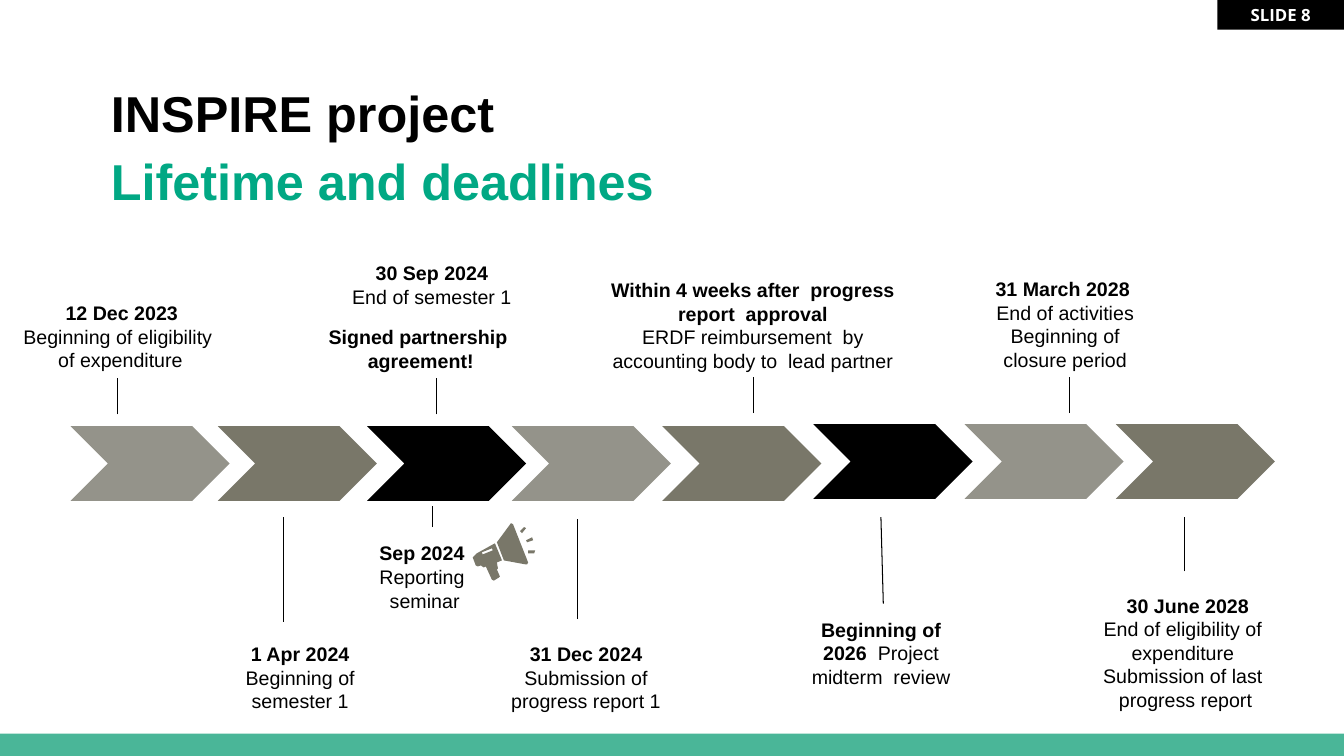
"""Build the project timeline slide with its lifetime and deadlines."""
from dataclasses import dataclass
from itertools import cycle

from lxml import etree
from pptx import Presentation
from pptx.dml.color import RGBColor
from pptx.enum import shapes, text
from pptx.oxml import ns
from pptx.util import Cm, Pt

BLACK = RGBColor(0x00, 0x00, 0x00)
WHITE = RGBColor(0xFF, 0xFF, 0xFF)
TEAL = RGBColor(0x01, 0xA8, 0x84)
MINT = RGBColor(0x4A, 0xB6, 0x98)
LIGHT_GREY = RGBColor(0x94, 0x93, 0x8A)
DARK_GREY = RGBColor(0x79, 0x77, 0x69)

CENTER = text.PP_ALIGN.CENTER
LEFT = text.PP_ALIGN.LEFT
HUNDREDTH_INCH = Cm(2.54) / 100

Point = tuple[int, int]


@dataclass(frozen=True)
class Line:
    bold: str = ""
    plain: str = ""
    right: float = 0
    before: float = 0
    align: text.PP_ALIGN = CENTER


@dataclass(frozen=True)
class Label:
    left: float
    top: float
    width: float
    height: float
    lines: tuple[Line, ...]
    indent: float = 0.25
    inset: float = 0.1


@dataclass(frozen=True)
class Tick:
    bottom_x: float
    bottom: float
    top_x: float
    top: float


CHEVRON_LEFTS = (1.78, 5.49, 9.25, 12.9, 16.69, 20.5, 24.31, 28.12)
CHEVRON_TOPS = (10.74,) * 5 + (10.69,) * 3

LABELS = (
    Label(0.28, 7.49, 5.33, 1.9, (
        Line("12 Dec 2023"),
        Line(plain="Beginning of eligibility  of expenditure", right=0.2))),
    Label(5.46, 16.08, 3.96, 1.9, (
        Line("1 Apr 2024 ", "Beginning of semester 1"),)),
    Label(7.14, 6.48, 7.24, 2.92, (
        Line("30 Sep 2024"),
        Line(plain="End of semester 1"),
        Line("Signed partnership  agreement!", right=0.56, before=12))),
    Label(12.5, 16.08, 4.29, 1.9, (
        Line("31 Dec 2024 ", "Submission of"),
        Line(plain="progress report 1"))),
    Label(14.94, 6.91, 8.15, 2.51, (
        Line("Within 4 weeks after  progress report  approval", right=0.33),
        Line(plain="ERDF reimbursement  by accounting body to  lead partner", right=0.33))),
    Label(19.84, 15.47, 4.83, 1.9, (
        Line("Beginning of 2026  ", "Project midterm  review", right=0.35),)),
    Label(27.51, 14.86, 4.6, 3.1, (
        Line("30 June 2028"),
        Line(plain="End of eligibility of  expenditure  Submission of last  progress report",
             right=0.25))),
    Label(24.84, 6.88, 4.24, 2.51, (
        Line("31 March 2028", align=LEFT),
        Line(plain="End of activities  Beginning of  closure period", right=0.48))),
    Label(9.5, 13.61, 2.24, 1.85, (
        Line("Sep 2024"),
        Line(plain="Reporting  seminar", before=0.1)), indent=0.03, inset=0.03),
)

TICKS = (
    Tick(7.14, 15.67, 7.14, 13.03),
    Tick(14.55, 15.6, 14.55, 13.08),
    Tick(22.26, 15.21, 22.2, 13.03),
    Tick(29.85, 14.4, 29.85, 13.03),
    Tick(10.9, 13.28, 10.9, 12.75),
    Tick(2.95, 10.44, 2.95, 9.53),
    Tick(11, 10.44, 11, 9.53),
    Tick(19, 10.41, 19, 9.5),
    Tick(26.95, 10.41, 26.95, 9.5),
)

MEGAPHONE_PARTS = (
    (((474, 562), (472, 561), (469, 553), (473, 549), (491, 539), (498, 556),
      (493, 558), (494, 564), (493, 565), (496, 572), (495, 573), (490, 576),
      (488, 575), (482, 562), (480, 563), (477, 561)),
     ((488, 544), (478, 548), (479, 550), (489, 546))),
    (((522, 560), (500, 556), (493, 538), (507, 519), (509, 520), (524, 558), (523, 560)),),
    (((523, 538), (522, 536), (528, 533), (529, 536)),),
    (((518, 529), (516, 527), (520, 523), (522, 524)),),
    (((530, 549), (524, 549), (524, 546), (531, 546)),),
)


def paint(shape, color: RGBColor) -> None:
    """Give a shape a plain fill without outline or shadow."""
    shape.shadow.inherit = False
    shape.fill.solid()
    shape.fill.fore_color.rgb = color
    shape.line.fill.background()


def add_block(slide, kind, left: float, top: float, width: float, height: float,
              color: RGBColor):
    """Add a filled preset shape."""
    shape = slide.shapes.add_shape(kind, Cm(left), Cm(top), Cm(width), Cm(height))
    paint(shape, color)
    return shape


def set_font(font, name: str, size: float, color: RGBColor, bold: bool) -> None:
    """Set every font property used on the slide."""
    font.name, font.size, font.bold = name, Pt(size), bold
    font.color.rgb = color


def set_indents(paragraph, **indents: float) -> None:
    """Write paragraph margins given in centimetres."""
    for name, value in indents.items():
        paragraph._p.get_or_add_pPr().set(name, str(int(Cm(value))))


def add_label(slide, label: Label) -> None:
    """Add one date label of the timeline."""
    box = slide.shapes.add_textbox(Cm(label.left), Cm(label.top),
                                   Cm(label.width), Cm(label.height))
    frame = box.text_frame
    frame.word_wrap = True
    frame.margin_left = frame.margin_right = frame.margin_bottom = 0
    frame.margin_top = Cm(label.inset)
    for index, line in enumerate(label.lines):
        paragraph = frame.add_paragraph() if index else frame.paragraphs[0]
        paragraph.alignment = line.align
        set_indents(paragraph, marL=label.indent, marR=line.right, indent=0)
        if line.before:
            paragraph.space_before = Pt(line.before)
        for content, bold in ((line.bold, True), (line.plain, False)):
            if content:
                run = paragraph.add_run()
                run.text = content
                set_font(run.font, "Arial", 14, BLACK, bold)


def add_tick(slide, tick: Tick) -> None:
    """Add a thin line between a label and its chevron."""
    connector = slide.shapes.add_connector(
        shapes.MSO_CONNECTOR.STRAIGHT, Cm(tick.bottom_x), Cm(tick.bottom),
        Cm(tick.top_x), Cm(tick.top))
    connector.line.color.rgb = BLACK
    connector.line.width = Pt(0.75)
    etree.SubElement(connector._element.spPr, ns.qn("a:effectLst"))


def add_outline(slide, contours: tuple[tuple[Point, ...], ...]) -> None:
    """Add one megaphone part from its closed contours."""
    first, *others = contours
    builder = slide.shapes.build_freeform(*first[0], scale=HUNDREDTH_INCH)
    builder.add_line_segments(first[1:], close=True)
    for contour in others:
        builder.move_to(*contour[0])
        builder.add_line_segments(contour[1:], close=True)
    paint(builder.convert_to_shape(), DARK_GREY)


def add_title(slide) -> None:
    """Fill and place the two-line title."""
    title = slide.shapes.title
    title.left, title.top, title.width, title.height = Cm(2.39), Cm(2.11), Cm(22.63), Cm(2.34)
    frame = title.text_frame
    frame.text = "INSPIRE project\nLifetime and deadlines"
    frame.auto_size = text.MSO_AUTO_SIZE.NONE
    frame.vertical_anchor = text.MSO_ANCHOR.TOP
    for paragraph, color, before in zip(frame.paragraphs, (BLACK, TEAL), (0, 10)):
        paragraph.alignment = LEFT
        paragraph.line_spacing = 0.9
        paragraph.space_before = Pt(before)
        set_indents(paragraph, marL=1.27, indent=-1.12)
        set_font(paragraph.runs[0].font, "Arial", 36, color, True)


def main() -> None:
    """Assemble the slide and save it."""
    presentation = Presentation()
    presentation.slide_width, presentation.slide_height = Cm(33.87), Cm(19.05)
    slide = presentation.slides.add_slide(presentation.slide_layouts[5])
    rectangle = shapes.MSO_SHAPE.RECTANGLE
    add_block(slide, rectangle, 0, 18.49, 33.87, 0.56, MINT)
    badge = add_block(slide, rectangle, 30.68, 0, 3.19, 0.75, BLACK)
    badge.text_frame.text = "SLIDE 8"
    badge.text_frame.vertical_anchor = text.MSO_ANCHOR.MIDDLE
    paragraph = badge.text_frame.paragraphs[0]
    paragraph.alignment = CENTER
    set_font(paragraph.runs[0].font, "Open Sans", 12, WHITE, True)
    colors = cycle((LIGHT_GREY, DARK_GREY, BLACK))
    for left, top, color in zip(CHEVRON_LEFTS, CHEVRON_TOPS, colors):
        add_block(slide, shapes.MSO_SHAPE.CHEVRON, left, top, 4.01, 1.88, color)
    for label in LABELS:
        add_label(slide, label)
    for tick in TICKS:
        add_tick(slide, tick)
    for contours in MEGAPHONE_PARTS:
        add_outline(slide, contours)
    add_title(slide)
    presentation.save("out.pptx")


if __name__ == "__main__":
    main()
